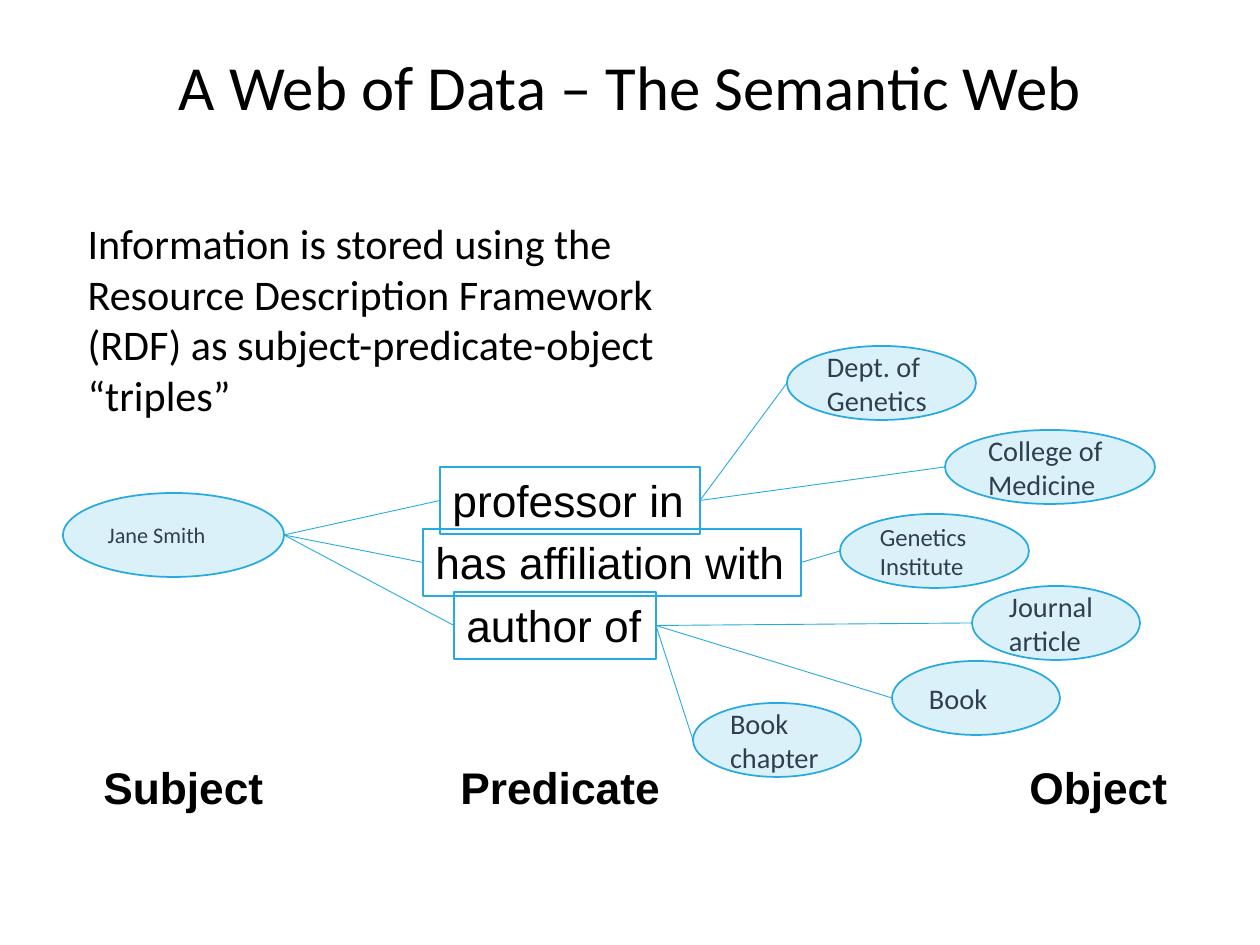
"""Build a slide showing RDF triples as a web of subject, predicates and objects."""
from lxml import etree
from pptx import Presentation
from pptx import util as u
from pptx.dml.color import RGBColor
from pptx.enum import shapes, text
from pptx.oxml.ns import qn

PX = u.Inches(1) // 126
BLACK = RGBColor(0x00, 0x00, 0x00)
SLATE = RGBColor(0x30, 0x3E, 0x4E)
BLUE = RGBColor(0x27, 0xAA, 0xE1)
PALE = RGBColor(0xDA, 0xF1, 0xFA)
KIND = shapes.MSO_SHAPE
TOP, MID = text.MSO_ANCHOR.TOP, text.MSO_ANCHOR.MIDDLE
LEFT, MIDST = text.PP_ALIGN.LEFT, text.PP_ALIGN.CENTER
GROW = text.MSO_AUTO_SIZE.SHAPE_TO_FIT_TEXT

deck = Presentation()
deck.slide_width, deck.slide_height = 1260 * PX, 945 * PX
slide = deck.slides.add_slide(deck.slide_layouts[6])


def write(shape, words, font, anchor=TOP, align=LEFT, wrap=True):
    frame = shape.text_frame
    frame.word_wrap = wrap
    frame.vertical_anchor = anchor
    if not wrap:
        frame.auto_size = GROW
    para = frame.paragraphs[0]
    para.alignment = align
    run = para.add_run()
    run.text = words
    for key, val in font.items():
        if key == "color":
            run.font.color.rgb = val
        else:
            setattr(run.font, key, val)


def draw(kind, box, fill=None, line=None):
    shape = slide.shapes.add_shape(kind, *[n * PX for n in box])
    shape.shadow.inherit = False
    if fill is None:
        shape.fill.background()
    else:
        shape.fill.solid()
        shape.fill.fore_color.rgb = fill
    if line is None:
        shape.line.fill.background()
    else:
        shape.line.color.rgb = BLUE
        shape.line.width = u.Pt(line)
    return shape


lead = {"name": "Calibri", "size": u.Pt(24.1), "color": BLACK}
note = draw(KIND.ROUNDED_RECTANGLE, (63, 199, 630, 252))
write(note, "Information is stored using the Resource Description Framework "
      "(RDF) as subject-predicate-object “triples”", lead)

label = {"name": "Arial", "size": u.Pt(25.3), "color": BLACK}
links = {}
for words, left, top, width in [
    ("professor in", 440, 467, 260),
    ("author of", 454, 592, 202),
    ("has affiliation with", 423, 529, 378),
]:
    links[words] = draw(KIND.RECTANGLE, (left, top, width, 67), line=0.75)
    write(links[words], words, label, wrap=False)

nodes = {}
for words, left, top, width, high, size in [
    ("Jane Smith", 63, 493, 221, 84, 12.7),
    ("Dept. of Genetics", 787, 346, 189, 74, 16.2),
    ("College of Medicine", 945, 430, 210, 74, 16.2),
    ("Journal article", 972, 586, 168, 74, 16.2),
    ("Book chapter", 693, 703, 168, 74, 16.2),
    ("Book", 892, 661, 168, 74, 16.2),
    ("Genetics Institute", 840, 514, 189, 74, 14.1),
]:
    nodes[words] = draw(KIND.OVAL, (left, top, width, high), PALE, 1)
    font = {"name": "Calibri", "size": u.Pt(size), "color": SLATE}
    write(nodes[words], words, font, MID)

for start, end in [
    ("Jane Smith", "professor in"),
    ("Jane Smith", "has affiliation with"),
    ("Jane Smith", "author of"),
    ("professor in", "Dept. of Genetics"),
    ("professor in", "College of Medicine"),
    ("has affiliation with", "Genetics Institute"),
    ("author of", "Journal article"),
    ("author of", "Book chapter"),
    ("author of", "Book"),
]:
    both = links | nodes
    one, two = both[start], both[end]
    wire = slide.shapes.add_connector(
        shapes.MSO_CONNECTOR.STRAIGHT,
        one.left + one.width, one.top + one.height // 2,
        two.left, two.top + two.height // 2)
    if start in links:
        wire.begin_connect(one, 3)
    if end in links:
        wire.end_connect(two, 1)
    wire.line.color.rgb = BLUE
    wire.line.width = u.Pt(0.5)
    etree.SubElement(wire._element.spPr, qn("a:effectLst"))

for words, left, width in [
    ("Subject", 91, 188), ("Predicate", 448, 227), ("Object", 1017, 165),
]:
    box = slide.shapes.add_textbox(left * PX, 754 * PX, width * PX, 67 * PX)
    write(box, words, label | {"bold": True}, wrap=False)

title = slide.shapes.add_textbox(0, 42 * PX, 1260 * PX, 116 * PX)
head = {"name": "Calibri", "size": u.Pt(35.9), "color": BLACK}
write(title, "A Web of Data – The Semantic Web", head, align=MIDST)

deck.save("out.pptx")
